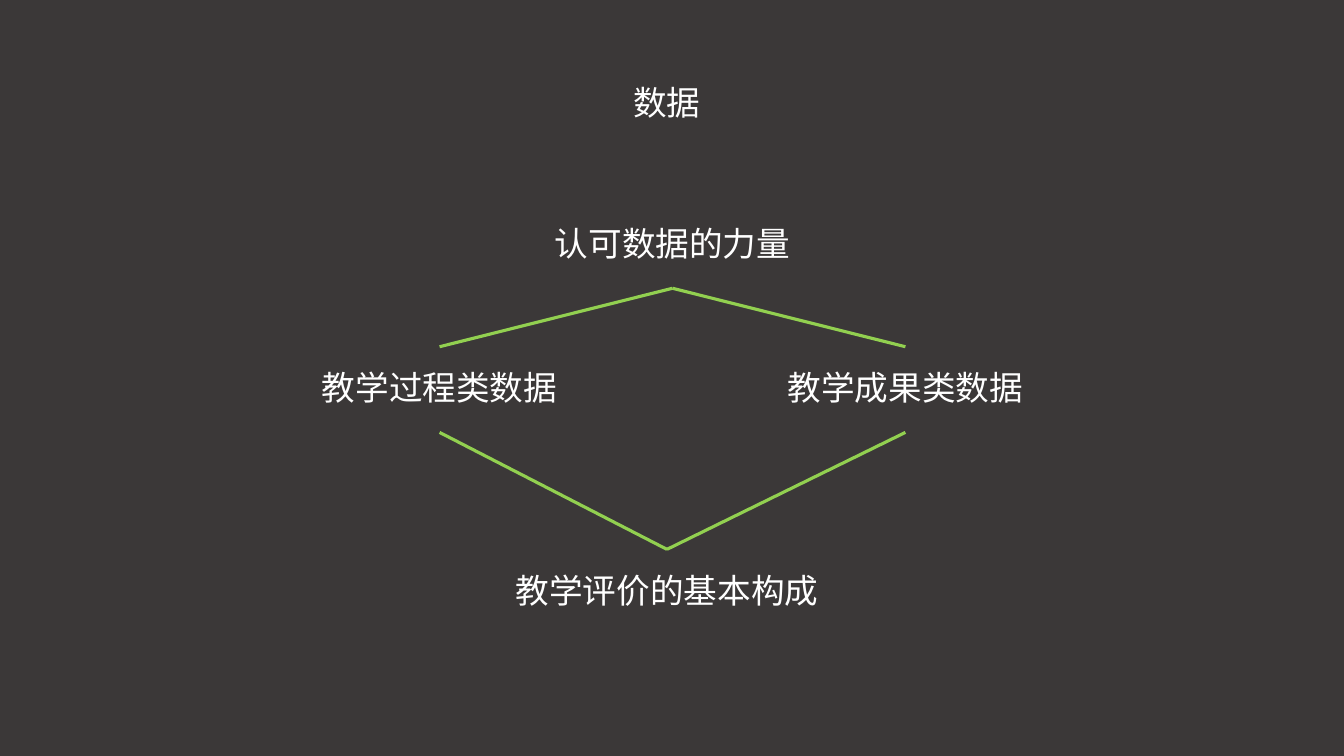
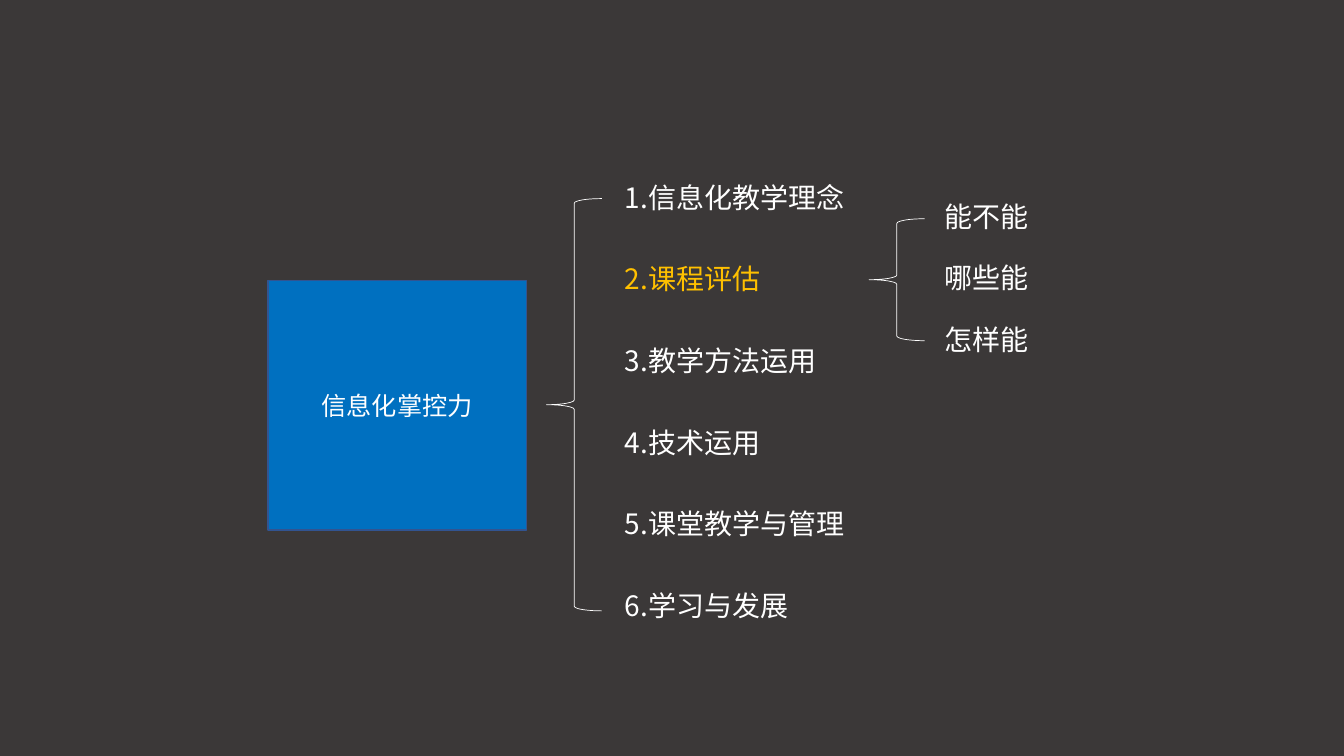
from dataclasses import dataclass

from lxml import etree
from pptx import Presentation
from pptx.dml.color import RGBColor
from pptx.enum.shapes import MSO_CONNECTOR, MSO_SHAPE
from pptx.enum.text import MSO_ANCHOR, MSO_AUTO_SIZE, PP_ALIGN
from pptx.oxml.ns import qn
from pptx.util import Inches, Pt

RECT, BRACE = MSO_SHAPE.RECTANGLE, MSO_SHAPE.LEFT_BRACE
STRAIGHT = MSO_CONNECTOR.STRAIGHT
LEFT, CENTER = PP_ALIGN.LEFT, PP_ALIGN.CENTER
MIDDLE = MSO_ANCHOR.MIDDLE
FIXED = MSO_AUTO_SIZE.NONE

DARK, WHITE, GREEN = "3B3838", "FFFFFF", "92D050"
BLUE, NAVY, GOLD = "0070C0", "325491", "FFC000"
CJK, LATIN = "Noto Sans CJK SC", "Calibri"
TITLE_ONLY, BLANK = 5, 6
TOP, BOTTOM = 0, 2
ROW = 0.85


@dataclass
class Box:
    left: float
    top: float
    width: float
    height: float = ROW

    def place(self) -> tuple:
        return tuple(Inches(v) for v in (self.left, self.top, self.width, self.height))


@dataclass
class Style:
    size: int
    color: str = WHITE
    align: int = LEFT
    font: str = CJK
    space: float = 0.9


@dataclass
class Column:
    left: float
    top: float
    width: float
    step: float
    items: tuple


HEAD = Style(24, align=CENTER)
ITEM = Style(20)
PICK = Style(20, GOLD)
LABEL = Style(18, align=CENTER, font=LATIN, space=1.0)

TITLE = Box(2.14, 0.61, 8.95)
NODES = {
    "认可数据的力量": Box(1.67, 2.01, 10),
    "教学过程类数据": Box(2.41, 3.44, 3.9),
    "教学成果类数据": Box(7.03, 3.44, 3.9),
    "教学评价的基本构成": Box(2.14, 5.45, 8.95),
}

PICKED = "2.课程评估"
COLUMNS = (
    Column(6.1, 1.55, 2.8, 0.81, (
        "1.信息化教学理念", PICKED, "3.教学方法运用",
        "4.技术运用", "5.课堂教学与管理", "6.学习与发展")),
    Column(9.27, 1.74, 1.66, 0.61, ("能不能", "哪些能", "怎样能")),
)
BRACES = (Box(5.42, 1.97, 0.55, 4.09), Box(8.62, 2.17, 0.55, 1.21))


def rgb(color: str) -> RGBColor:
    return RGBColor.from_string(color)


def write(shape, text: str, style: Style) -> None:
    frame = shape.text_frame
    frame.text = text
    frame.word_wrap = True
    frame.auto_size = FIXED
    frame.vertical_anchor = MIDDLE
    para = frame.paragraphs[0]
    para.alignment = style.align
    para.line_spacing = style.space
    font = para.runs[0].font
    font.size = Pt(style.size)
    font.name = style.font
    font.color.rgb = rgb(style.color)
    # East Asian glyphs take their typeface from a:ea
    props = para.runs[0]._r.get_or_add_rPr()
    etree.SubElement(props, qn("a:ea")).set("typeface", CJK)


def add_text(slide, box: Box, text: str, style: Style):
    shape = slide.shapes.add_textbox(*box.place())
    write(shape, text, style)
    return shape


def add_shape(slide, kind, box: Box, line: str, width: float, fill: str = ""):
    shape = slide.shapes.add_shape(kind, *box.place())
    shape.shadow.inherit = False
    if fill:
        shape.fill.solid()
        shape.fill.fore_color.rgb = rgb(fill)
    else:
        shape.fill.background()
    shape.line.color.rgb = rgb(line)
    shape.line.width = Pt(width)
    return shape


def link(slide, upper, lower) -> None:
    """Join the bottom of the upper box to the top of the lower one."""
    line = slide.shapes.add_connector(STRAIGHT, 0, 0, 0, 0)
    line.begin_connect(upper, BOTTOM)
    line.end_connect(lower, TOP)
    line.line.color.rgb = rgb(GREEN)
    line.line.width = Pt(2.25)
    etree.SubElement(line._element.spPr, qn("a:effectLst"))


def add_data(deck) -> None:
    slide = deck.slides.add_slide(deck.slide_layouts[TITLE_ONLY])
    title = slide.shapes.title
    title.left, title.top, title.width, title.height = TITLE.place()
    write(title, "数据", HEAD)
    power, *kinds, result = [
        add_text(slide, box, text, HEAD) for text, box in NODES.items()]
    for kind in kinds:
        link(slide, power, kind)
        link(slide, kind, result)


def add_skills(deck) -> None:
    slide = deck.slides.add_slide(deck.slide_layouts[BLANK])
    square = add_shape(slide, RECT, Box(2.66, 2.78, 2.56, 2.48), NAVY, 1, BLUE)
    write(square, "信息化掌控力", LABEL)
    for brace, col in zip(BRACES, COLUMNS):
        add_shape(slide, BRACE, brace, WHITE, 0.5)
        for i, text in enumerate(col.items):
            box = Box(col.left, col.top + i * col.step, col.width)
            add_text(slide, box, text, PICK if text == PICKED else ITEM)


def main() -> None:
    deck = Presentation()
    deck.slide_width, deck.slide_height = Inches(13.33), Inches(7.5)
    back = deck.slide_master.background.fill
    back.solid()
    back.fore_color.rgb = rgb(DARK)
    add_data(deck)
    add_skills(deck)
    deck.save("out.pptx")


if __name__ == "__main__":
    main()
